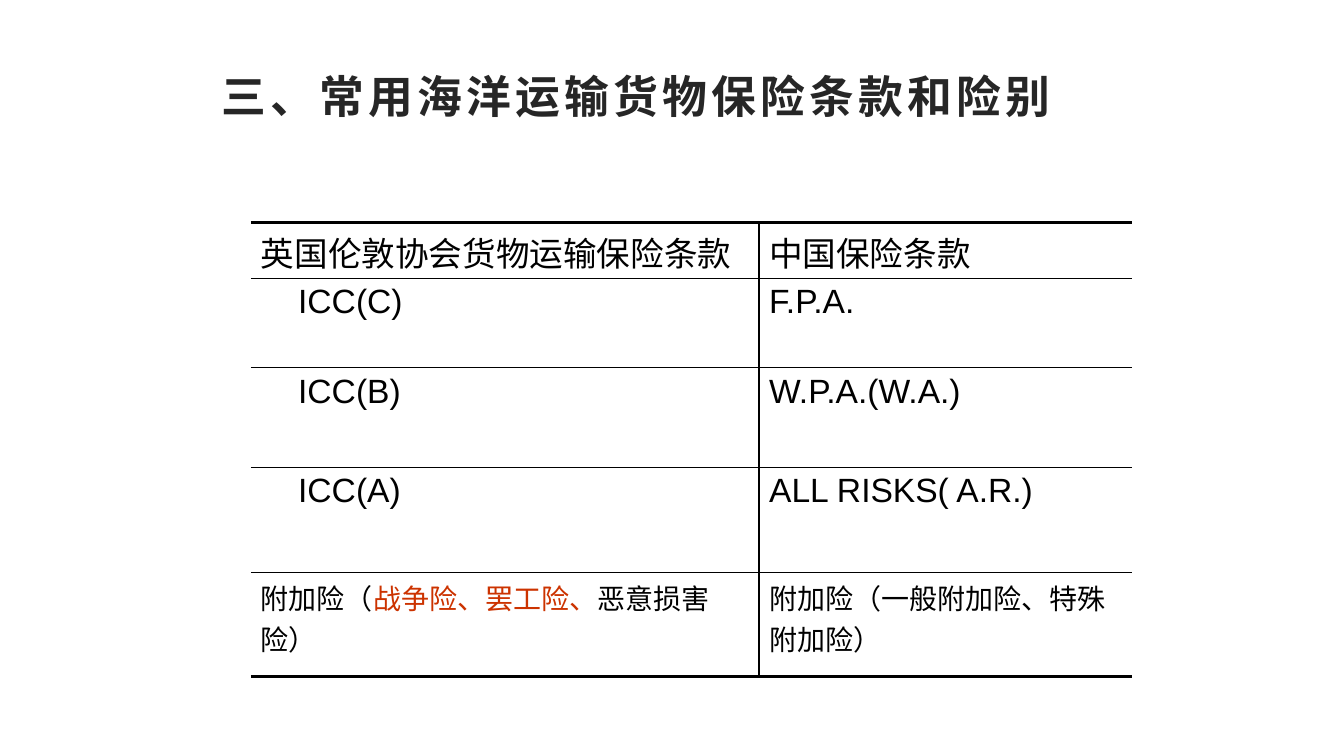
from dataclasses import dataclass

from lxml.etree import SubElement
from pptx import Presentation
from pptx.dml.color import RGBColor
from pptx.enum.text import MSO_ANCHOR as Anchor, PP_ALIGN as Align
from pptx.oxml.ns import qn
from pptx.util import Cm, Pt


@dataclass(frozen=True)
class Theme:
    title_color: str = "262626"
    text_color: str = "000000"
    accent_color: str = "CC3300"
    title_size: int = 32
    body_size: int = 24
    note_size: int = 20
    latin_font: str = "Arial"
    chinese_font: str = "Noto Sans CJK SC"
    thin_line: float = 1
    thick_line: float = 2.25


THEME = Theme()
TITLE = "三、常用海洋运输货物保险条款和险别"
CLAUSES = [
    ("英国伦敦协会货物运输保险条款", "中国保险条款"),
    ("ICC(C)", "F.P.A."),
    ("ICC(B)", "W.P.A.(W.A.)"),
    ("ICC(A)", "ALL RISKS( A.R.)"),
    (
        [
            ("附加险（", THEME.text_color),
            ("战争险、罢工险、", THEME.accent_color),
            ("恶意损害险）", THEME.text_color),
        ],
        "附加险（一般附加险、特殊附加险）",
    ),
]
COLUMN_SHARES = (0.577, 0.423)
ROW_HEIGHTS = (1.4, 2.26, 2.51, 2.64, 2.64)
CLAUSE_INDENT = 0.94


def add_text(paragraph, text, *, size, color=THEME.text_color,
             font=THEME.latin_font, bold=False, spacing=0):
    run = paragraph.add_run()
    run.text = text
    run.font.name = font
    run.font.size = Pt(size)
    run.font.bold = bold
    run.font.color.rgb = RGBColor.from_string(color)
    properties = run.font._element
    SubElement(properties, qn("a:ea"), typeface=THEME.chinese_font)
    if spacing:
        properties.set("spc", str(spacing * 100))


def set_borders(cell, widths):
    properties = cell._tc.get_or_add_tcPr()
    for side in "LRTB":
        width = widths.get(side, 0)
        line = SubElement(properties, qn(f"a:ln{side}"), w=str(Pt(width)))
        if width:
            fill = SubElement(line, qn("a:solidFill"))
            SubElement(fill, qn("a:srgbClr"), val=THEME.text_color)
        else:
            SubElement(line, qn("a:noFill"))


def add_title(slide, left, top, width, height):
    shape = slide.shapes.add_textbox(Cm(left), Cm(top), Cm(width), Cm(height))
    frame = shape.text_frame
    frame.word_wrap = True
    frame.vertical_anchor = Anchor.MIDDLE
    paragraph = frame.paragraphs[0]
    paragraph.alignment = Align.LEFT
    add_text(paragraph, TITLE, size=THEME.title_size, color=THEME.title_color,
             font=THEME.chinese_font, bold=True, spacing=3)


def fill_cell(cell, content, size):
    paragraph = cell.text_frame.paragraphs[0]
    paragraph.space_before = Pt(size * 0.2)
    parts = [(content, THEME.text_color)] if isinstance(content, str) else content
    for text, color in parts:
        add_text(paragraph, text, size=size, color=color)


def add_clause_table(slide, left, top, width, height):
    last_row, last_column = len(CLAUSES) - 1, len(COLUMN_SHARES) - 1
    table = slide.shapes.add_table(
        len(CLAUSES), len(COLUMN_SHARES), Cm(left), Cm(top), Cm(width), Cm(height)
    ).table
    table.first_row = False
    table.horz_banding = False
    for column, share in zip(table.columns, COLUMN_SHARES):
        column.width = Cm(width * share)
    for row, row_height in zip(table.rows, ROW_HEIGHTS):
        row.height = Cm(height * row_height / sum(ROW_HEIGHTS))

    for row_index, contents in enumerate(CLAUSES):
        size = THEME.note_size if row_index == last_row else THEME.body_size
        for column_index, content in enumerate(contents):
            cell = table.cell(row_index, column_index)
            set_borders(cell, {
                "L": THEME.thin_line if column_index > 0 else 0,
                "R": THEME.thin_line if column_index < last_column else 0,
                "T": THEME.thin_line if row_index > 0 else THEME.thick_line,
                "B": THEME.thin_line if row_index < last_row else THEME.thick_line,
            })
            cell.fill.background()
            if column_index == 0 and 0 < row_index < last_row:
                cell.margin_left += Cm(CLAUSE_INDENT)
            fill_cell(cell, content, size)


def main():
    presentation = Presentation()
    presentation.slide_width = Cm(33.87)
    presentation.slide_height = Cm(19.05)
    slide = presentation.slides.add_slide(presentation.slide_layouts[6])
    add_title(slide, 5.33, 0.91, 22.81, 3)
    add_clause_table(slide, 6.32, 5.61, 22.2, 11.45)
    presentation.save("out.pptx")


if __name__ == "__main__":
    main()
